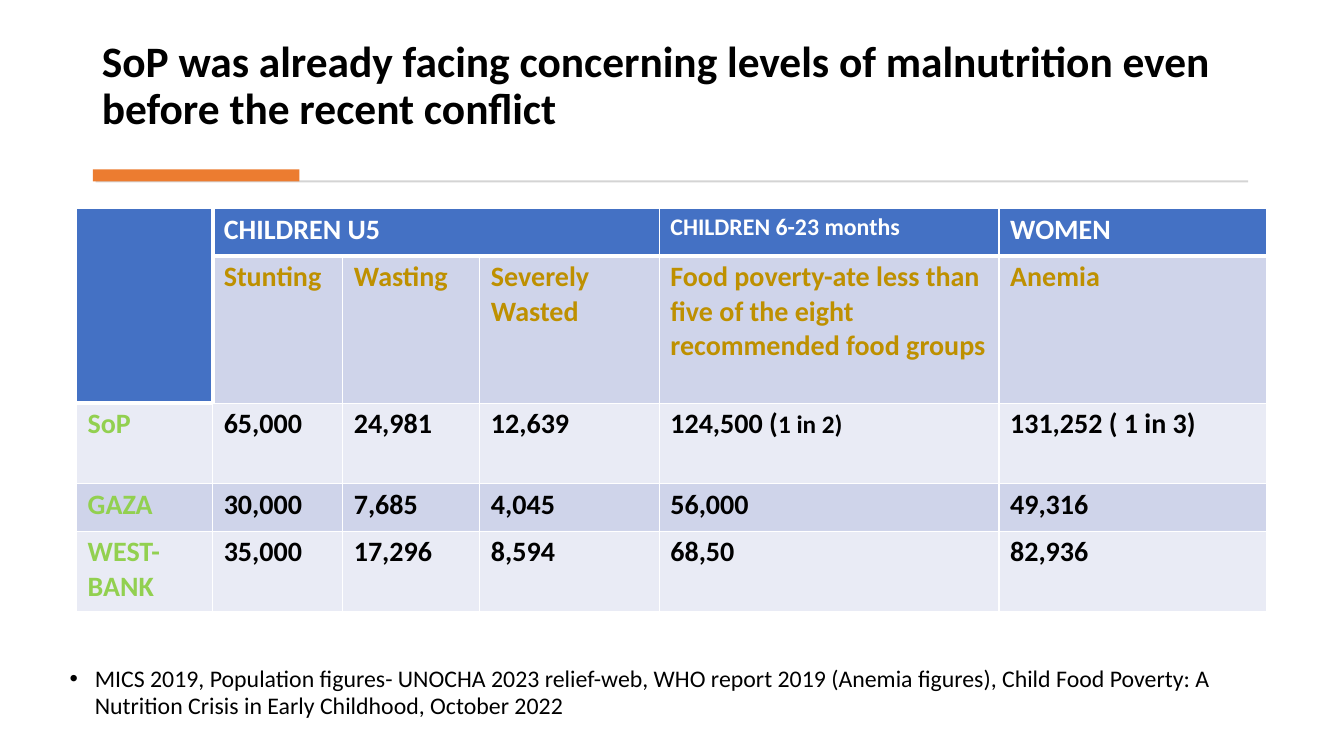
from dataclasses import dataclass

import pptx
import pptx.dml.color
import pptx.enum.shapes
import pptx.enum.text
import pptx.oxml
import pptx.oxml.ns
import pptx.util
from pptx.util import Inches

COLORS = {
    "black": "000000", "white": "FFFFFF", "gold": "BE9000", "green": "92D050",
    "header": "4471C4", "band": "CFD4EA", "light": "E9EBF5",
    "orange": "EC7C30", "rule": "D4D4D4",
}
FONT = "Calibri"


@dataclass(frozen=True)
class Bar:
    left: float
    top: float
    width: float
    height: float
    color: str


@dataclass(frozen=True)
class Row:
    height: float
    fill: str
    label_color: str
    text_color: str
    cells: tuple[str, ...]


TITLE = "SoP was already facing concerning levels of malnutrition even before the recent conflict"
BARS = (
    Bar(0.95, 1.79, 11.43, 0.02, "rule"),
    Bar(0.92, 1.68, 2.05, 0.12, "orange"),
)
COLUMN_WIDTHS = (1.35, 1.29, 1.36, 1.78, 3.37, 2.65)
ROWS = (
    Row(0.47, "header", "white", "white",
        ("", "CHILDREN U5", "", "", "CHILDREN 6-23 months", "WOMEN")),
    Row(1.46, "band", "gold", "gold",
        ("", "Stunting", "Wasting", "Severely Wasted",
         "Food poverty-ate less than five of the eight recommended food groups", "Anemia")),
    Row(0.8, "light", "green", "black",
        ("SoP", "65,000", "24,981", "12,639", "124,500 (1 in 2)", "131,252 ( 1 in 3)")),
    Row(0.47, "band", "green", "black",
        ("GAZA", "30,000", "7,685", "4,045", "56,000", "49,316")),
    Row(0.8, "light", "green", "black",
        ("WEST- BANK", "35,000", "17,296", "8,594", "68,50", "82,936")),
)
# Cells whose text is set smaller, as (text, size) pieces
SIZED_PIECES = {
    (0, 4): (("CHILDREN 6-23 months", 17),),
    (2, 4): (("124,500 (", 20), ("1 in 2)", 18)),
}
SOURCES = (
    "MICS 2019, Population figures- UNOCHA 2023 relief-web, "
    "WHO report 2019 (Anemia figures), Child Food Poverty: A",
    "Nutrition Crisis in Early Childhood, October 2022",
)


def rgb(name: str) -> pptx.dml.color.RGBColor:
    return pptx.dml.color.RGBColor.from_string(COLORS[name])


def format_run(run, size: float, color: str, bold: bool = False) -> None:
    run.font.name = FONT
    run.font.size = pptx.util.Pt(size)
    run.font.bold = bold
    run.font.color.rgb = rgb(color)


def set_margins(frame, top: float) -> None:
    frame.margin_left = frame.margin_right = frame.margin_bottom = 0
    frame.margin_top = Inches(top)
    frame.word_wrap = True
    frame.vertical_anchor = pptx.enum.text.MSO_ANCHOR.TOP


def add_title(slide) -> None:
    title = slide.shapes.title
    title.left, title.top = Inches(1.01), Inches(0.32)
    title.width, title.height = Inches(11.02), Inches(1.01)
    frame = title.text_frame
    frame.text = TITLE
    frame.auto_size = pptx.enum.text.MSO_AUTO_SIZE.NONE
    set_margins(frame, 0.07)
    heading = frame.paragraphs[0]
    heading.alignment = pptx.enum.text.PP_ALIGN.LEFT
    heading.line_spacing = pptx.util.Pt(33.5)
    heading.space_before = pptx.util.Pt(5.2)
    format_run(heading.runs[0], 31, "black", True)


def add_bar(slide, bar: Bar) -> None:
    shape = slide.shapes.add_shape(
        pptx.enum.shapes.MSO_SHAPE.RECTANGLE,
        Inches(bar.left), Inches(bar.top), Inches(bar.width), Inches(bar.height))
    shape.shadow.inherit = False
    shape.fill.solid()
    shape.fill.fore_color.rgb = rgb(bar.color)
    shape.line.fill.background()


def set_borders(cell, row: int, column: int) -> None:
    """Thick lines below the header and beside the empty corner, thin elsewhere."""
    thick = {
        "lnL": column == 1 and row < 2,
        "lnR": column == 0 and row < 2,
        "lnT": (row == 1 and column > 0) or (row == 2 and column == 0),
        "lnB": row == 0 or (row == 1 and column == 0),
    }
    properties = cell._tc.get_or_add_tcPr()
    for position, (side, is_thick) in enumerate(thick.items()):
        width = pptx.util.Pt(3 if is_thick else 1)
        properties.insert(position, pptx.oxml.parse_xml(
            f'<a:{side} {pptx.oxml.ns.nsdecls("a")} w="{width}"><a:solidFill>'
            f'<a:srgbClr val="{COLORS["white"]}"/></a:solidFill></a:{side}>'))


def fill_cell(cell, row_index: int, column: int, row: Row) -> None:
    cell.fill.solid()
    # The corner reaches down into the second row
    cell.fill.fore_color.rgb = rgb("header" if (row_index, column) == (1, 0) else row.fill)
    set_borders(cell, row_index, column)
    cell.margin_left, cell.margin_top = Inches(0.11), Inches(0.04)
    cell.margin_right = cell.margin_bottom = 0
    cell.vertical_anchor = pptx.enum.text.MSO_ANCHOR.TOP
    if not row.cells[column]:
        return
    entry = cell.text_frame.paragraphs[0]
    entry.space_before = pptx.util.Pt(2.8)
    color = row.text_color if column else row.label_color
    for text, size in SIZED_PIECES.get((row_index, column), ((row.cells[column], 20),)):
        piece = entry.add_run()
        piece.text = text
        format_run(piece, size, color, True)


def add_malnutrition_table(slide) -> None:
    table = slide.shapes.add_table(
        len(ROWS), len(COLUMN_WIDTHS), Inches(0.76), Inches(2.07),
        Inches(sum(COLUMN_WIDTHS)), Inches(sum(row.height for row in ROWS))).table
    table.first_row = table.horz_banding = False
    for column, width in enumerate(COLUMN_WIDTHS):
        table.columns[column].width = Inches(width)
    for row_index, row in enumerate(ROWS):
        table.rows[row_index].height = Inches(row.height)
        for column in range(len(COLUMN_WIDTHS)):
            fill_cell(table.cell(row_index, column), row_index, column, row)
    table.cell(0, 0).merge(table.cell(1, 0))
    table.cell(0, 1).merge(table.cell(0, 3))


def add_sources(slide) -> None:
    frame = slide.shapes.add_textbox(
        Inches(0.68), Inches(6.59), Inches(11.39), Inches(0.57)).text_frame
    set_margins(frame, 0.01)
    frame.text = "\n".join(SOURCES)
    for line in frame.paragraphs:
        line.line_spacing = pptx.util.Pt(19.4)
        format_run(line.runs[0], 17, "black")
        line._p.get_or_add_pPr().set("marL", str(Inches(0.26)))
    # Bullet on the first line only
    first = frame.paragraphs[0]
    first.space_before = pptx.util.Pt(1.1)
    properties = first._p.get_or_add_pPr()
    properties.set("indent", str(Inches(-0.25)))
    for bullet in ('buFont {} typeface="Arial"', 'buChar {} char="•"'):
        properties.append(pptx.oxml.parse_xml(
            f'<a:{bullet.format(pptx.oxml.ns.nsdecls("a"))}/>'))


def main() -> None:
    deck = pptx.Presentation()
    deck.slide_width, deck.slide_height = Inches(13.33), Inches(7.5)
    slide = deck.slides.add_slide(deck.slide_layouts[5])
    add_title(slide)
    for bar in BARS:
        add_bar(slide, bar)
    add_malnutrition_table(slide)
    add_sources(slide)
    deck.save("out.pptx")


if __name__ == "__main__":
    main()
